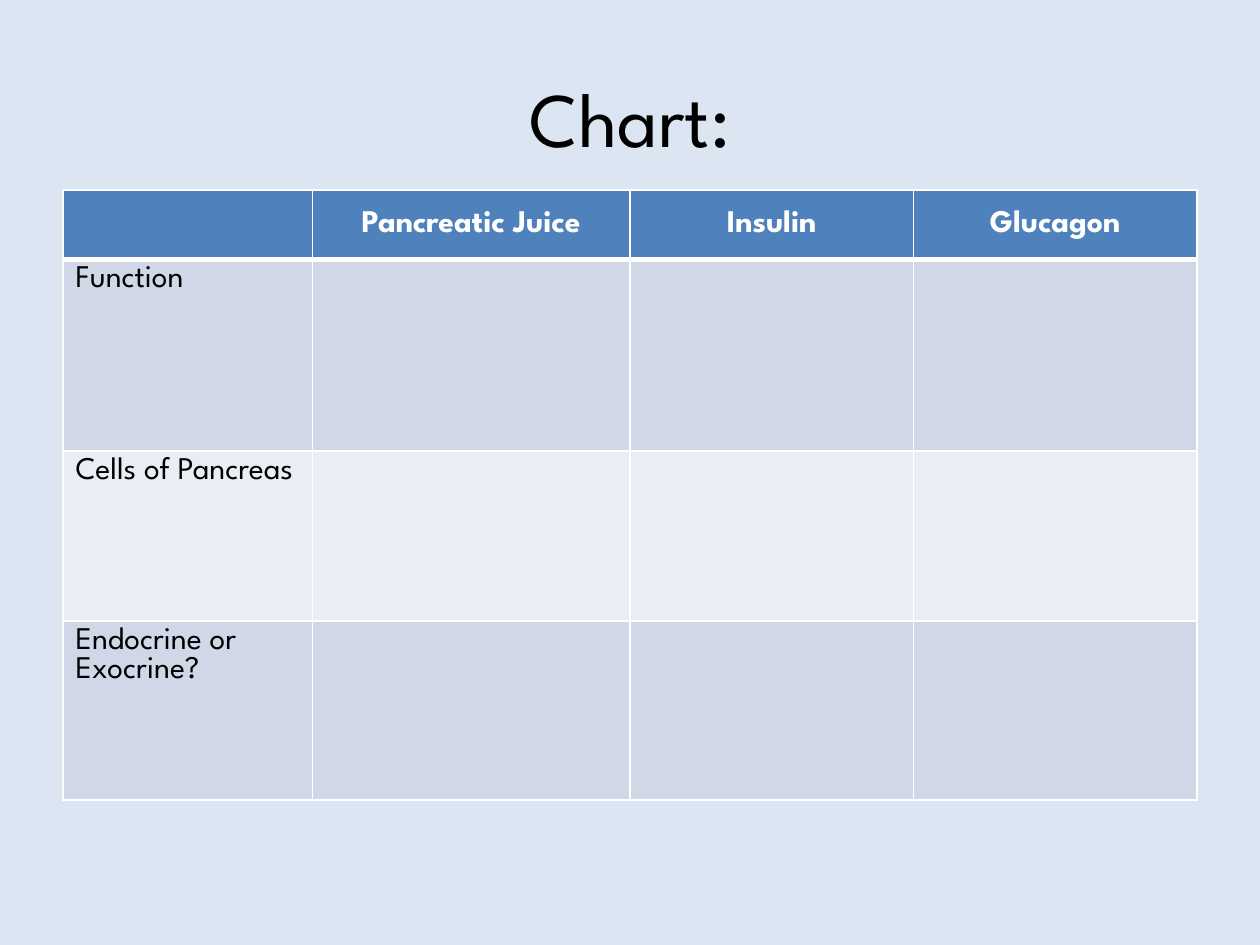
from dataclasses import dataclass

from lxml.etree import SubElement
from pptx import Presentation
from pptx.dml.color import RGBColor
from pptx.enum.text import MSO_ANCHOR, PP_ALIGN
from pptx.oxml.ns import qn
from pptx.slide import Slide
from pptx.table import Table, _Cell
from pptx.text.text import TextFrame
from pptx.util import Pt

FONT = "League Spartan"
BLACK, WHITE = "000000", "FFFFFF"
HEADER_FILL = "4F81BD"
COLUMN_WIDTHS = [142.56, 181.44, 162, 162]
HEADINGS = ["", "Pancreatic Juice", "Insulin", "Glucagon"]
HEADER_HEIGHT = 39.6
THIN, THICK = 1, 3


@dataclass(frozen=True)
class BodyRow:
    label: str
    height: float
    fill: str


@dataclass(frozen=True)
class TextStyle:
    size: float
    color: str
    bold: bool = False
    align: PP_ALIGN = PP_ALIGN.LEFT


TITLE_STYLE = TextStyle(44, BLACK, align=PP_ALIGN.CENTER)
HEADER_STYLE = TextStyle(18, WHITE, bold=True, align=PP_ALIGN.CENTER)
BODY_STYLE = TextStyle(18, BLACK)

BODY_ROWS = [
    BodyRow("Function", 109.44, "D0D8E8"),
    BodyRow("Cells of Pancreas", 97.2, "E9EDF4"),
    BodyRow("Endocrine or\nExocrine?", 102.24, "D0D8E8"),
]


def hex_color(value: str) -> RGBColor:
    return RGBColor.from_string(value)


def write_text(frame: TextFrame, text: str, style: TextStyle) -> None:
    """Fill the frame with one paragraph per line of text."""
    frame.text = text
    for paragraph in frame.paragraphs:
        paragraph.alignment = style.align
        paragraph.font.name = FONT
        paragraph.font.size = Pt(style.size)
        paragraph.font.bold = style.bold
        paragraph.font.color.rgb = hex_color(style.color)


def set_borders(cell: _Cell, top: float, bottom: float) -> None:
    """Draw white borders; the sides are always thin."""
    properties = cell._tc.get_or_add_tcPr()
    widths = {"a:lnL": THIN, "a:lnR": THIN, "a:lnT": top, "a:lnB": bottom}
    for tag, width in widths.items():
        line = SubElement(properties, qn(tag), w=str(Pt(width)))
        fill = SubElement(line, qn("a:solidFill"))
        SubElement(fill, qn("a:srgbClr"), val=WHITE)


def fill_cell(cell: _Cell, color: str) -> None:
    cell.fill.solid()
    cell.fill.fore_color.rgb = hex_color(color)


def draw_title(slide: Slide, text: str) -> None:
    box = slide.shapes.add_textbox(Pt(36), Pt(21.6), Pt(648), Pt(90))
    box.text_frame.word_wrap = True
    box.text_frame.vertical_anchor = MSO_ANCHOR.MIDDLE
    write_text(box.text_frame, text, TITLE_STYLE)


def draw_header(table: Table) -> None:
    for cell, heading in zip(table.rows[0].cells, HEADINGS):
        set_borders(cell, THIN, THICK)
        fill_cell(cell, HEADER_FILL)
        cell.vertical_anchor = MSO_ANCHOR.MIDDLE
        write_text(cell.text_frame, heading, HEADER_STYLE)


def draw_body(table: Table) -> None:
    for index, body_row in enumerate(BODY_ROWS, start=1):
        for column, cell in enumerate(table.rows[index].cells):
            set_borders(cell, THICK if index == 1 else THIN, THIN)
            fill_cell(cell, body_row.fill)
            write_text(cell.text_frame, "" if column else body_row.label, BODY_STYLE)


def draw_table(slide: Slide) -> None:
    heights = [HEADER_HEIGHT] + [row.height for row in BODY_ROWS]
    frame = slide.shapes.add_table(
        len(heights), len(COLUMN_WIDTHS), Pt(36), Pt(108.72),
        Pt(sum(COLUMN_WIDTHS)), Pt(sum(heights)),
    )
    table = frame.table
    for column, width in zip(table.columns, COLUMN_WIDTHS):
        column.width = Pt(width)
    for row, height in zip(table.rows, heights):
        row.height = Pt(height)
    draw_header(table)
    draw_body(table)


def main() -> None:
    deck = Presentation()
    deck.slide_width, deck.slide_height = Pt(720), Pt(540)
    slide = deck.slides.add_slide(deck.slide_layouts[6])
    slide.background.fill.solid()
    slide.background.fill.fore_color.rgb = hex_color("DCE6F2")
    draw_title(slide, "Chart:")
    draw_table(slide)
    deck.save("out.pptx")


if __name__ == "__main__":
    main()
